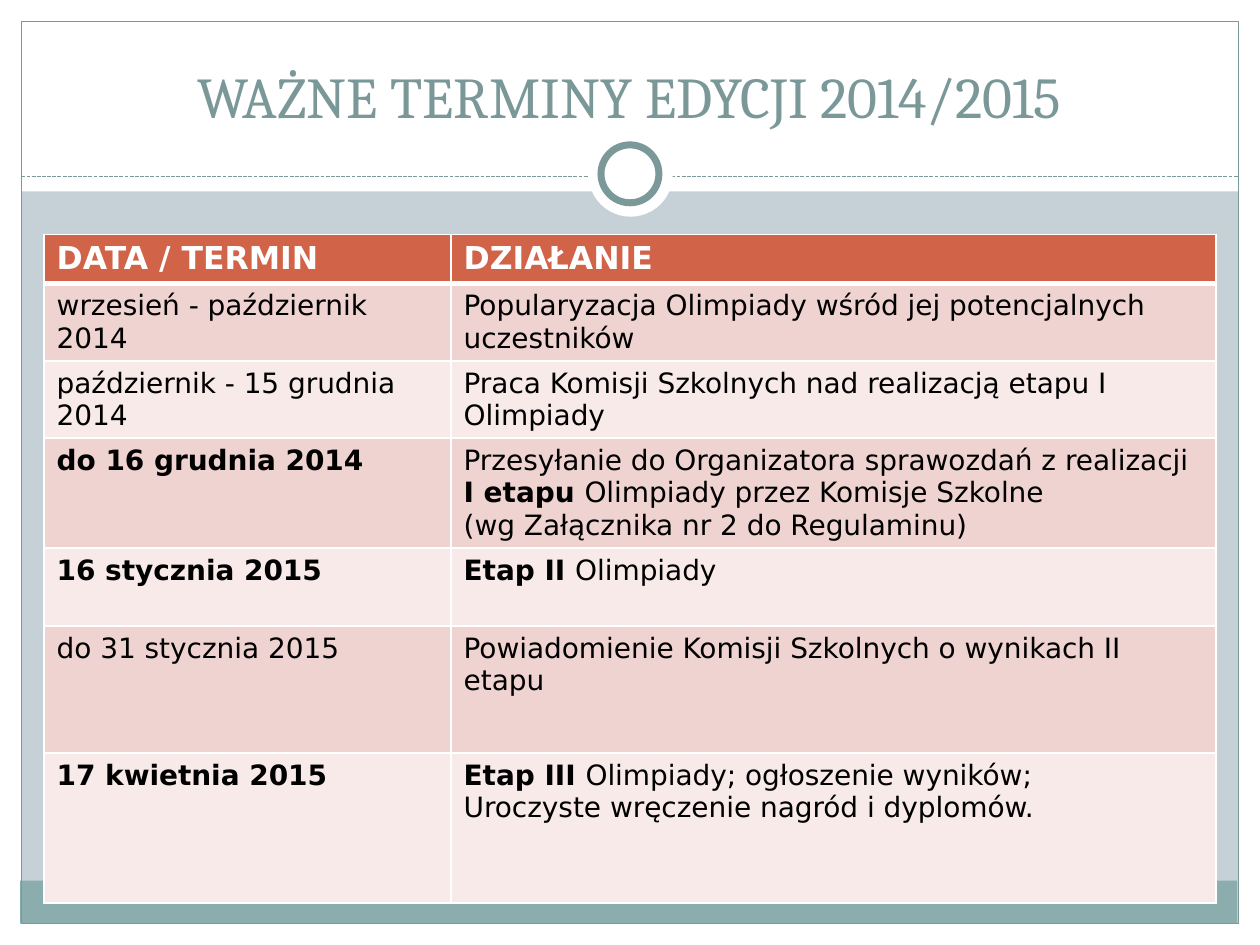
from lxml import etree
from pptx import Presentation
from pptx.dml.color import RGBColor
from pptx.enum.dml import MSO_LINE_DASH_STYLE as Dash
from pptx.enum.shapes import MSO_CONNECTOR as Connector, MSO_SHAPE as Shape
from pptx.enum.text import MSO_ANCHOR as Anchor, MSO_AUTO_SIZE as AutoSize, PP_ALIGN as Align
from pptx.oxml.ns import qn
from pptx.util import Inches, Pt

COLORS = {
    "background": "C5D1D7", "white": "FFFFFF", "black": "000000",
    "frame": "7C999A", "title": "7B9899", "footer": "8CADAE",
    "header": "D16349", "odd": "EED3D0", "even": "F7EAE9",
}
TITLE = "WAŻNE TERMINY EDYCJI 2014/2015"
HEADINGS = ["DATA / TERMIN", "DZIAŁANIE"]
SCHEDULE = [
    ("wrzesień - październik 2014", False,
     [[("Popularyzacja Olimpiady wśród jej potencjalnych uczestników", False)]]),
    ("październik - 15 grudnia 2014", False,
     [[("Praca Komisji Szkolnych nad realizacją etapu I Olimpiady", False)]]),
    ("do 16 grudnia 2014", True,
     [[("Przesyłanie do Organizatora sprawozdań z realizacji\n", False),
       ("I etapu ", True),
       ("Olimpiady przez Komisje Szkolne\n(wg Załącznika nr 2 do Regulaminu)", False)]]),
    ("16 stycznia 2015", True, [[("Etap II ", True), ("Olimpiady", False)]]),
    ("do 31 stycznia 2015", False,
     [[("Powiadomienie Komisji Szkolnych o wynikach\u00a0II etapu", False)]]),
    ("17 kwietnia 2015", True,
     [[("Etap III ", True), ("Olimpiady; ogłoszenie wyników;", False)],
      [("Uroczyste wręczenie nagród i dyplomów.", False)]]),
]
COLUMN_WIDTHS = [3.23, 6.07]
ROW_HEIGHTS = [0.38, 0.61, 0.61, 0.86, 0.62, 1.01, 1.19]
DECORATIONS = [
    (Shape.RECTANGLE, (0, 7.33, 10, 0.17), "white", None),
    (Shape.RECTANGLE, (0, 0, 10, 1.52), "white", None),
    (Shape.RECTANGLE, (0, 0, 0.17, 7.5), "white", None),
    (Shape.RECTANGLE, (9.83, 0, 0.17, 7.5), "white", None),
    (Shape.RECTANGLE, (0.16, 6.99, 9.66, 0.34), "footer", None),
    (Shape.RECTANGLE, (0.17, 0.17, 9.66, 7.16), None, 0.75),
    (Shape.OVAL, (4.67, 1.05, 0.67, 0.67), "white", None),
    (Shape.OVAL, (4.77, 1.15, 0.46, 0.46), "white", 4),
]
DIVIDER_AFTER = 6


def rgb(name):
    return RGBColor.from_string(COLORS[name])


def add_decoration(slide, kind, box, fill, line_width):
    shape = slide.shapes.add_shape(kind, *map(Inches, box))
    shape.shadow.inherit = False
    if fill:
        shape.fill.solid()
        shape.fill.fore_color.rgb = rgb(fill)
    else:
        shape.fill.background()
    if line_width:
        shape.line.color.rgb = rgb("frame")
        shape.line.width = Pt(line_width)
    else:
        shape.line.fill.background()


def add_divider(slide):
    ends = map(Inches, (0.17, 1.4, 9.83, 1.4))
    divider = slide.shapes.add_connector(Connector.STRAIGHT, *ends)
    divider.line.color.rgb = rgb("frame")
    divider.line.width = Pt(0.75)
    divider.line.dash_style = Dash.SQUARE_DOT
    divider._element.spPr.append(etree.Element(qn("a:effectLst")))


def add_text(paragraph, text, color, **formats):
    for index, line in enumerate(text.split("\n")):
        if index:
            paragraph.add_line_break()
        if line:
            run = paragraph.add_run()
            run.text = line
            run.font.color.rgb = rgb(color)
            for key, value in formats.items():
                setattr(run.font, key, value)


def fill_title(slide):
    title = slide.shapes.title
    box = dict(zip(("left", "top", "width", "height"), map(Inches, (0.33, 0.25, 9.33, 0.83))))
    for key, value in box.items():
        setattr(title, key, value)
    frame = title.text_frame
    frame.word_wrap = True
    frame.auto_size = AutoSize.NONE
    frame.vertical_anchor = Anchor.BOTTOM
    frame.paragraphs[0].alignment = Align.CENTER
    add_text(frame.paragraphs[0], TITLE, "title", name="Cambria", size=Pt(33))
    slide.shapes._spTree.append(title._element)


def add_borders(cell, widths):
    properties = cell._tc.get_or_add_tcPr()
    for side, width in widths.items():
        border = etree.SubElement(properties, qn(f"a:ln{side}"), w=str(Pt(width)))
        solid = etree.SubElement(border, qn("a:solidFill"))
        etree.SubElement(solid, qn("a:srgbClr"), val=COLORS["white"])


def add_schedule(slide):
    rows = [[[[(heading, True)]] for heading in HEADINGS]]
    rows += [[[[(date, bold)]], action] for date, bold, action in SCHEDULE]
    box = map(Inches, (0.35, 1.86, sum(COLUMN_WIDTHS), sum(ROW_HEIGHTS)))
    table = slide.shapes.add_table(len(rows), len(HEADINGS), *box).table
    for column, width in zip(table.columns, COLUMN_WIDTHS):
        column.width = Inches(width)
    for row, height in zip(table.rows, ROW_HEIGHTS):
        row.height = Inches(height)
    for row_index, row in enumerate(rows):
        is_header = row_index == 0
        fill = "header" if is_header else ("even", "odd")[row_index % 2]
        color, size = ("white", 18) if is_header else ("black", 16)
        borders = {"L": 1, "R": 1, "T": 3 if row_index == 1 else 1, "B": 3 if is_header else 1}
        for column_index, paragraphs in enumerate(row):
            cell = table.cell(row_index, column_index)
            add_borders(cell, borders)
            cell.fill.solid()
            cell.fill.fore_color.rgb = rgb(fill)
            frame = cell.text_frame
            for index, pieces in enumerate(paragraphs):
                paragraph = frame.add_paragraph() if index else frame.paragraphs[0]
                for text, bold in pieces:
                    add_text(paragraph, text, color, name="DejaVu Sans", size=Pt(size), bold=bold)


def main():
    deck = Presentation()
    deck.slide_width, deck.slide_height = Inches(10), Inches(7.5)
    slide = deck.slides.add_slide(deck.slide_layouts[5])
    slide.background.fill.solid()
    slide.background.fill.fore_color.rgb = rgb("background")
    for index, decoration in enumerate(DECORATIONS):
        if index == DIVIDER_AFTER:
            add_divider(slide)
        add_decoration(slide, *decoration)
    fill_title(slide)
    add_schedule(slide)
    deck.save("out.pptx")


if __name__ == "__main__":
    main()
